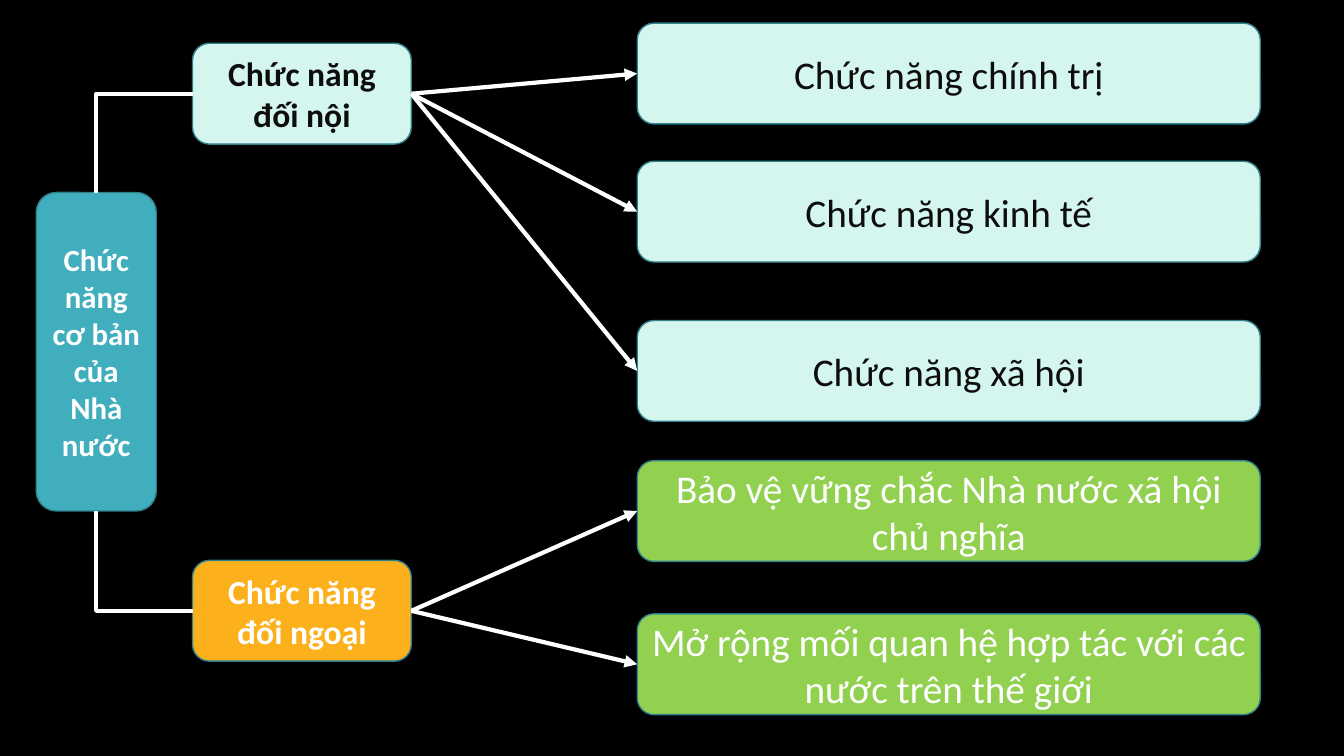
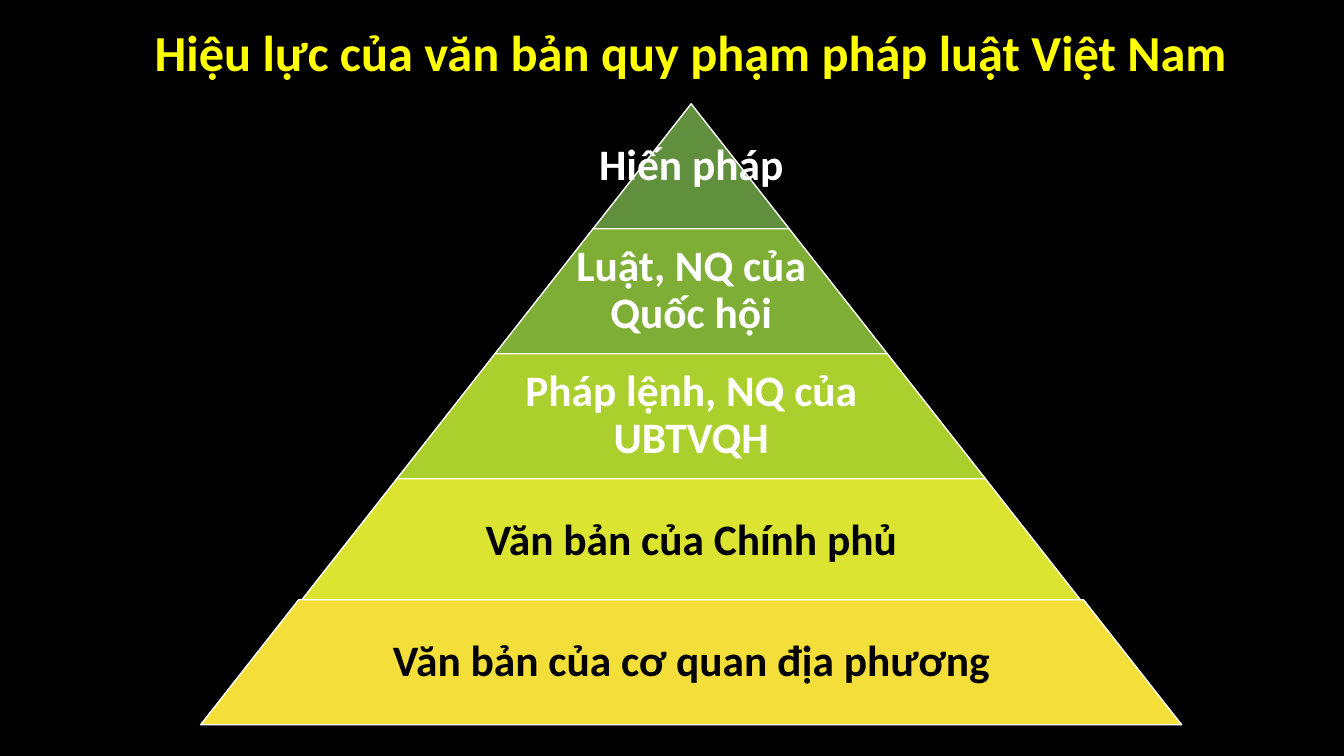
from dataclasses import dataclass

from lxml import etree
from pptx import Presentation
from pptx.dml.color import RGBColor
from pptx.enum.shapes import MSO_CONNECTOR, MSO_SHAPE
from pptx.enum.text import MSO_ANCHOR, PP_ALIGN
from pptx.oxml.ns import qn
from pptx.util import Inches, Pt

ROUNDED = MSO_SHAPE.ROUNDED_RECTANGLE
TRAPEZOID = MSO_SHAPE.TRAPEZOID
STRAIGHT = MSO_CONNECTOR.STRAIGHT
ELBOW = MSO_CONNECTOR.ELBOW
MIDDLE = MSO_ANCHOR.MIDDLE
CENTER = PP_ALIGN.CENTER
TOP, LEFT, BOTTOM, RIGHT = range(4)


@dataclass(frozen=True)
class Theme:
    font: str = "Calibri"
    background: str = "000000"
    white: str = "FFFFFF"
    black: str = "000000"
    ink: str = "0D0D0D"
    title: str = "FFFF00"
    border: str = "30818C"
    teal: str = "41AEBD"
    mint: str = "D5F6EE"
    orange: str = "FCB11C"
    green: str = "92D050"
    title_size: float = 36
    tier_size: float = 31
    item_size: float = 28
    branch_size: float = 24
    root_size: float = 22
    border_width: float = 1
    link_width: float = 3


@dataclass(frozen=True)
class Area:
    left: float
    top: float
    width: float
    height: float

    def emu(self) -> tuple:
        return tuple(Inches(v) for v in (self.left, self.top, self.width, self.height))


@dataclass(frozen=True)
class TextStyle:
    size: float
    color: str
    bold: bool = True
    line_spacing: float = 1.0


@dataclass(frozen=True)
class Item:
    text: str
    top: float


@dataclass(frozen=True)
class Branch:
    lines: tuple
    top: float
    fill: str
    color: str
    root_side: int
    item_fill: str
    items: tuple


@dataclass(frozen=True)
class Tier:
    text: str
    fill: str
    color: str
    text_share: float = 0.65


THEME = Theme()

BRANCHES = (
    Branch(("Chức năng", "đối nội"), 0.43, THEME.mint, THEME.ink, TOP, THEME.mint, (
        Item("Chức năng chính trị", 0.23),
        Item("Chức năng kinh tế", 1.6),
        Item("Chức năng xã hội", 3.18),
    )),
    Branch(("Chức năng", "đối ngoại"), 5.56, THEME.orange, THEME.white, BOTTOM, THEME.green, (
        Item("Bảo vệ vững chắc Nhà nước xã hội chủ nghĩa", 4.57),
        Item("Mở rộng mối quan hệ hợp tác với các nước trên thế giới", 6.09),
    )),
)

TIERS = (
    Tier("Hiến pháp", "608F3D", THEME.white, 1),
    Tier("Luật, NQ của Quốc hội", "7EAE36", THEME.white),
    Tier("Pháp lệnh, NQ của UBTVQH", "ABD02D", THEME.white),
    Tier("Văn bản của Chính phủ", "DBE431", THEME.black),
    Tier("Văn bản của cơ quan địa phương", "F4DE3A", THEME.black),
)
PYRAMID = Area(1.99, 1.03, 9.73, 6.16)
TIER_HEIGHT = 1.24


def rgb(value: str) -> RGBColor:
    return RGBColor.from_string(value)


def write(sp, lines: tuple, style: TextStyle) -> None:
    tf = sp.text_frame
    tf.word_wrap = True
    tf.vertical_anchor = MIDDLE
    for i, line in enumerate(lines):
        p = tf.add_paragraph() if i else tf.paragraphs[0]
        p.alignment = CENTER
        p.line_spacing = style.line_spacing
        r = p.add_run()
        r.text = line
        r.font.name = THEME.font
        r.font.size = Pt(style.size)
        r.font.bold = style.bold
        r.font.color.rgb = rgb(style.color)


def add_filled(shapes, kind, area: Area, fill: str, border: str):
    sp = shapes.add_shape(kind, *area.emu())
    sp.shadow.inherit = False
    sp.fill.solid()
    sp.fill.fore_color.rgb = rgb(fill)
    sp.line.color.rgb = rgb(border)
    sp.line.width = Pt(THEME.border_width)
    return sp


def add_box(s, area: Area, fill: str, lines: tuple, style: TextStyle):
    sp = add_filled(s.shapes, ROUNDED, area, fill, THEME.border)
    write(sp, lines, style)
    return sp


def add_link(s, kind, start, start_side: int, end, end_side: int):
    link = s.shapes.add_connector(kind, 0, 0, 0, 0)
    link.begin_connect(start, start_side)
    link.end_connect(end, end_side)
    link.line.color.rgb = rgb(THEME.white)
    link.line.width = Pt(THEME.link_width)
    props = link._element.spPr
    if kind == ELBOW:
        props.find(qn("a:prstGeom")).set("prst", "bentConnector2")
    else:
        etree.SubElement(props.find(qn("a:ln")), qn("a:tailEnd"), type="triangle")
    etree.SubElement(props, qn("a:effectLst"))


def build_functions(s) -> None:
    root = add_box(s, Area(0.36, 1.91, 1.19, 3.16), THEME.teal,
                   ("Chức năng cơ bản của Nhà nước",),
                   TextStyle(THEME.root_size, THEME.white))
    for branch in BRANCHES:
        node = add_box(s, Area(1.91, branch.top, 2.17, 1), branch.fill,
                       branch.lines, TextStyle(THEME.branch_size, branch.color))
        add_link(s, ELBOW, node, LEFT, root, branch.root_side)
        item_color = THEME.ink if branch.item_fill == THEME.mint else THEME.white
        item_style = TextStyle(THEME.item_size, item_color, bold=False)
        for item in branch.items:
            box = add_box(s, Area(6.32, item.top, 6.18, 1), branch.item_fill,
                          (item.text,), item_style)
            add_link(s, STRAIGHT, node, RIGHT, box, LEFT)


def add_tier(shapes, tier: Tier, index: int) -> None:
    center = PYRAMID.left + PYRAMID.width / 2
    width = PYRAMID.width * (index + 1) / len(TIERS)
    top = min(PYRAMID.top + index * TIER_HEIGHT,
              PYRAMID.top + PYRAMID.height - TIER_HEIGHT)
    sp = add_filled(shapes, TRAPEZOID, Area(center - width / 2, top, width, TIER_HEIGHT),
                    tier.fill, THEME.white)
    sp.adjustments[0] = PYRAMID.width / len(TIERS) / 2 / TIER_HEIGHT

    text_width = width * tier.text_share
    label = shapes.add_textbox(
        *Area(center - text_width / 2, top, text_width, TIER_HEIGHT).emu())
    tf = label.text_frame
    tf.margin_left = tf.margin_right = tf.margin_top = tf.margin_bottom = Inches(0.04)
    write(label, (tier.text,), TextStyle(THEME.tier_size, tier.color, line_spacing=0.9))


def build_pyramid(s) -> None:
    title = s.shapes.add_textbox(*Area(0.19, 0.15, 13.33, 0.72).emu())
    write(title, ("Hiệu lực của văn bản quy phạm pháp luật Việt Nam",),
          TextStyle(THEME.title_size, THEME.title))
    group = s.shapes.add_group_shape()
    for i, tier in enumerate(TIERS):
        add_tier(group.shapes, tier, i)


def main() -> None:
    prs = Presentation()
    prs.slide_width = Inches(13.33)
    prs.slide_height = Inches(7.5)
    fill = prs.slide_master.background.fill
    fill.solid()
    fill.fore_color.rgb = rgb(THEME.background)
    for build in (build_functions, build_pyramid):
        build(prs.slides.add_slide(prs.slide_layouts[6]))
    prs.save("out.pptx")


if __name__ == "__main__":
    main()
